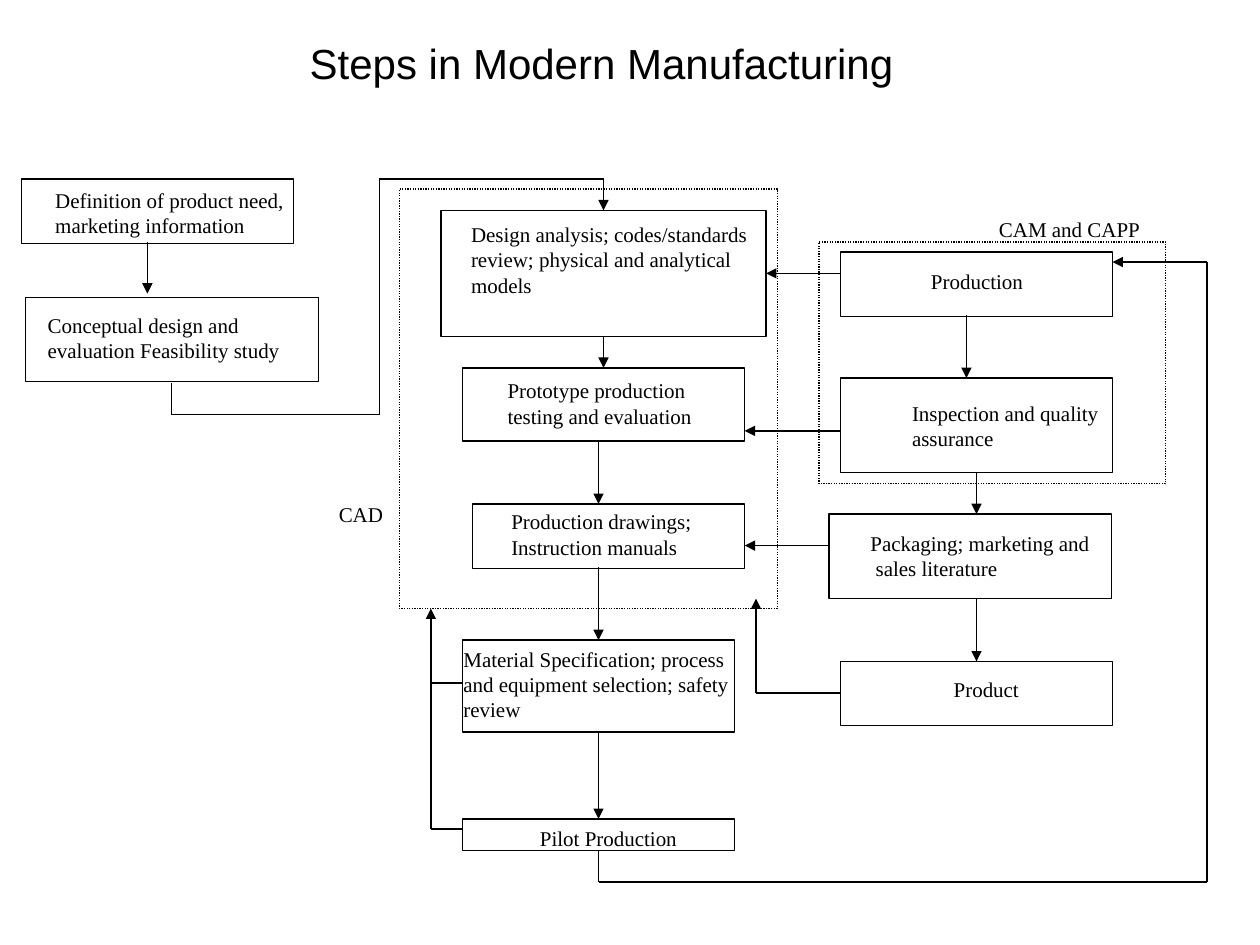
from dataclasses import dataclass
from itertools import pairwise

from lxml.etree import SubElement
from pptx import Presentation
from pptx.dml.color import RGBColor
from pptx.enum.dml import MSO_LINE_DASH_STYLE as DASH
from pptx.enum.shapes import MSO_CONNECTOR as LINK
from pptx.enum.shapes import MSO_SHAPE as SHAPE
from pptx.enum.text import MSO_ANCHOR as ANCHOR
from pptx.enum.text import PP_ALIGN as ALIGN
from pptx.oxml.ns import qn
from pptx.util import Inches, Pt


@dataclass(frozen=True)
class Theme:
    """Colours, fonts and sizes of the slide."""
    ink: RGBColor = RGBColor(0, 0, 0)
    paper: RGBColor = RGBColor(255, 255, 255)
    title_font: str = "Arial"
    body_font: str = "Times New Roman"
    title_size: float = 24
    body_size: float = 12
    line_width: float = 0.75


@dataclass(frozen=True)
class Box:
    """An area in inches."""
    left: float
    top: float
    width: float
    height: float

    def inside(self, left, top, width, height):
        """Return an area given relative to this one."""
        return Box(self.left + left, self.top + top, width, height)

    def points(self, *offsets):
        """Return slide points for offsets from the top left corner."""
        return [(self.left + x, self.top + y) for x, y in offsets]

    def lengths(self):
        """Return the four sides as lengths."""
        return [Inches(side) for side in (self.left, self.top, self.width, self.height)]


THEME = Theme()


def add_text(page, box, lines, align=ALIGN.LEFT, font=THEME.body_font, size=THEME.body_size):
    """Write one paragraph for each line and return the text frame."""
    frame = page.shapes.add_textbox(*box.lengths()).text_frame
    frame.word_wrap = True
    for index, line in enumerate(lines):
        para = frame.add_paragraph() if index else frame.paragraphs[0]
        para.alignment = align
        span = para.add_run()
        span.text = line
        span.font.name = font
        span.font.size = Pt(size)
        span.font.color.rgb = THEME.ink
    return frame


def add_outline(page, box, kind=SHAPE.FLOWCHART_PROCESS):
    """Draw an outlined shape without fill and return it."""
    shape = page.shapes.add_shape(kind, *box.lengths())
    shape.shadow.inherit = False
    shape.fill.background()
    shape.line.color.rgb = THEME.ink
    shape.line.width = Pt(THEME.line_width)
    return shape


def add_group_frame(page, box):
    """Draw the dotted frame round a group of steps."""
    frame = add_outline(page, box, SHAPE.RECTANGLE)
    frame.fill.solid()
    frame.fill.fore_color.rgb = THEME.paper
    frame.line.dash_style = DASH.ROUND_DOT


def add_route(page, points, arrow=True):
    """Join the points with straight lines, with an arrowhead at the end."""
    for start, end in pairwise(points):
        link = page.shapes.add_connector(LINK.STRAIGHT, *map(Inches, start + end))
        link.line.color.rgb = THEME.ink
        link.line.width = Pt(THEME.line_width)
        properties = link.element.spPr
        if arrow and end == points[-1]:
            SubElement(properties.find(qn("a:ln")), qn("a:tailEnd"), type="triangle")
        SubElement(properties, qn("a:effectLst"))


def add_steps(page, box, steps, drops):
    """Draw the steps and the downward arrows between them."""
    for outline, area, lines, *align in steps:
        add_outline(page, box.inside(*outline))
        add_text(page, box.inside(*area), lines, *align)
    for x, top, bottom in drops:
        add_route(page, box.points((x, top), (x, bottom)))


def add_title(page, box):
    """Write the slide title."""
    frame = add_text(page, box, ["Steps in Modern Manufacturing"],
                     font=THEME.title_font, size=THEME.title_size)
    frame.vertical_anchor = ANCHOR.MIDDLE
    frame.paragraphs[0].line_spacing = 0.9


def add_concept(page, box):
    """Draw the definition and concept steps."""
    steps = [
        ((0, 0, 2.16, 0.51), (0.17, 0.02, 2.04, 0.5),
         ["Definition of product need, marketing information"]),
        ((0.03, 0.94, 2.33, 0.67), (0.11, 1.01, 2.78, 0.6),
         ["Conceptual design and", "evaluation Feasibility study"]),
    ]
    add_steps(page, box, steps, [(1, 0.5, 0.91)])


def add_design(page, box):
    """Draw the CAD group with the steps down to pilot production."""
    add_group_frame(page, box)
    steps = [
        ((0.33, 0.17, 2.58, 1), (0.47, 0.21, 2.5, 0.71),
         ["Design analysis; codes/standards review; physical and analytical models"]),
        ((0.5, 1.42, 2.24, 0.58), (0.76, 1.45, 2.25, 0.6),
         ["Prototype production", "testing and evaluation"]),
        ((0.58, 2.5, 2.16, 0.51), (0.79, 2.49, 2.33, 0.5),
         ["Production drawings; Instruction manuals"]),
        ((0.5, 3.58, 2.16, 0.73), (0.41, 3.58, 2.5, 1),
         ["Material Specification; process", "and equipment selection; safety review"]),
        ((0.5, 5, 2.16, 0.25), (0.41, 5, 2.5, 0.3), ["Pilot Production"], ALIGN.CENTER),
    ]
    drops = [(1.62, 1.17, 1.42), (1.58, 2, 2.5), (1.58, 3, 3.58), (1.58, 4.31, 5)]
    add_steps(page, box, steps, drops)
    add_text(page, box.inside(-0.58, 2.43, 0.58, 0.3), ["CAD"])
    add_route(page, box.points((0.5, 3.92), (0.25, 3.92)), arrow=False)
    add_route(page, box.points((0.5, 5.08), (0.25, 5.08), (0.25, 3.33)))


def add_production(page, box):
    """Draw the CAM and CAPP group with the steps down to the product."""
    add_group_frame(page, box)
    steps = [
        ((0.17, 0.08, 2.16, 0.51), (0.79, 0.16, 1.12, 0.3), ["Production"]),
        ((0.17, 1.08, 2.16, 0.75), (0.64, 1.21, 2.5, 0.6),
         ["Inspection and quality", "assurance"]),
        ((0.08, 2.16, 2.24, 0.67), (0.31, 2.24, 2.5, 0.6),
         ["Packaging; marketing and", " sales literature"]),
        ((0.17, 3.33, 2.16, 0.51), (0.97, 3.4, 0.92, 0.3), ["Product"]),
    ]
    drops = [(1.17, 0.58, 1.08), (1.25, 1.83, 2.16), (1.25, 2.83, 3.33)]
    add_steps(page, box, steps, drops)
    add_text(page, box.inside(1.33, -0.25, 2.17, 0.3), ["CAM and CAPP"])


def add_group_links(page, box):
    """Draw the routes that lead from one group to another."""
    routes = [
        [(1.36, 3.04), (1.36, 3.29), (3.01, 3.29), (3.01, 1.42), (4.79, 1.42), (4.79, 1.67)],
        [(4.75, 6.75), (4.75, 7), (9.58, 7), (9.58, 2.08), (8.83, 2.08)],
        [(6.67, 2.17), (6.08, 2.17)],
        [(6.67, 3.42), (5.91, 3.42)],
        [(6.58, 4.33), (5.91, 4.33)],
        [(6.67, 5.5), (6, 5.5), (6, 4.75)],
    ]
    for route in routes:
        add_route(page, box.points(*route))


def main():
    """Build the slide and save the deck."""
    deck = Presentation()
    deck.slide_width, deck.slide_height = Inches(10), Inches(7.5)
    page = deck.slides.add_slide(deck.slide_layouts[6])
    add_title(page, Box(2.36, 0.27, 7.5, 0.5))
    add_concept(page, Box(0.17, 1.42, 2.36, 1.61))
    add_design(page, Box(3.17, 1.5, 3, 3.33))
    add_production(page, Box(6.5, 1.92, 2.75, 1.92))
    add_group_links(page, Box(0, 0, 10, 7.5))
    deck.save("out.pptx")


if __name__ == "__main__":
    main()
